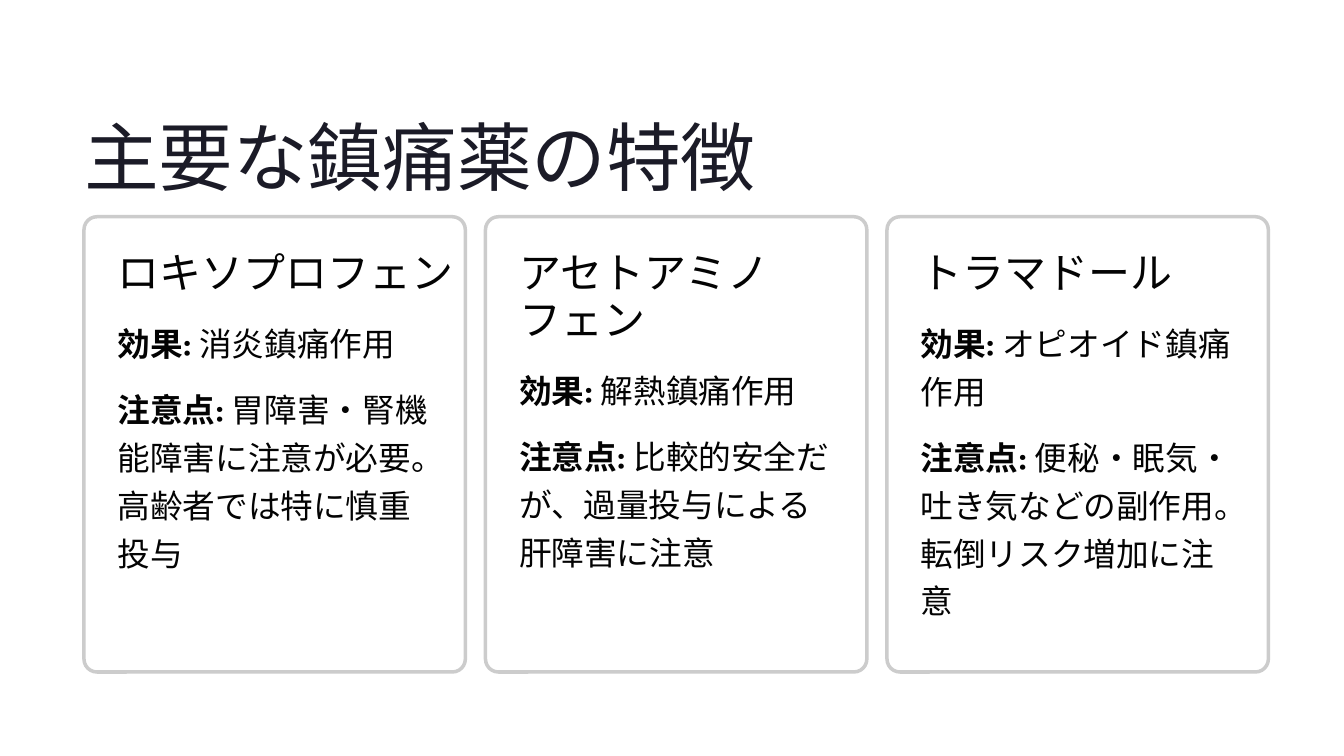
from lxml import etree
from pptx import Presentation
from pptx.dml.color import RGBColor
from pptx.enum.shapes import MSO_SHAPE
from pptx.enum.text import MSO_ANCHOR, PP_ALIGN
from pptx.oxml.ns import qn
from pptx.util import Inches, Pt

ROUND = MSO_SHAPE.ROUNDED_RECTANGLE
TOP = MSO_ANCHOR.TOP
LEFT = PP_ALIGN.LEFT

COLORS = {"title": "1B1B27", "text": "030303", "card": "FFFFFF", "edge": "CCCCCC"}

CARDS = [
    ("ロキソプロフェン", 1, "消炎鎮痛作用", 1,
     "胃障害・腎機能障害に注意が必要。高齢者では特に慎重投与", 4),
    ("アセトアミノフェン", 2, "解熱鎮痛作用", 1,
     "比較的安全だが、過量投与による肝障害に注意", 3),
    ("トラマドール", 1, "オピオイド鎮痛作用", 2,
     "便秘・眠気・吐き気などの副作用。転倒リスク増加に注意", 3),
]


def color(key):
    return RGBColor.from_string(COLORS[key])


def add_text(slide, box, runs, font, size, lead, tint="text"):
    frame = slide.shapes.add_textbox(*map(Inches, box)).text_frame
    frame.margin_left = frame.margin_right = 0
    frame.margin_top = frame.margin_bottom = 0
    frame.word_wrap = True
    frame.vertical_anchor = TOP
    para = frame.paragraphs[0]
    para.alignment = LEFT
    para.line_spacing = Pt(lead)
    for words, bold in runs:
        run = para.add_run()
        run.text = words
        run.font.name = font
        run.font.size = Pt(size)
        run.font.bold = bold
        run.font.color.rgb = color(tint)


def add_title(slide, box):
    add_text(slide, box, [("主要な鎮痛薬の特徴", False)], "Inter", 64, 80, "title")


def add_panel(slide, box):
    panel = slide.shapes.add_shape(ROUND, *map(Inches, box))
    panel.adjustments[0] = 0.034
    panel.shadow.inherit = False
    panel.fill.solid()
    panel.fill.fore_color.rgb = color("card")
    fill = panel.fill.fore_color._xFill.find(qn("a:srgbClr"))
    etree.SubElement(fill, qn("a:alpha")).set("val", "95000")
    panel.line.color.rgb = color("edge")
    panel.line.width = Pt(3)


def add_card(slide, box, card):
    name, rows, effect, span, note, depth = card
    left, top, width, height = box
    add_panel(slide, box)
    left, top, width = left + 0.4, top + 0.4, width - 0.81
    room = width + 0.37 if rows == 1 else width
    add_text(slide, (left, top, room, 0.65 * rows), [(name, False)], "Inter", 36, 40)
    top += 0.56 * rows + 0.21
    add_text(slide, (left, top, width, 0.67 * span),
             [("効果:", True), (" " + effect, False)], "Karla", 28, 41)
    top += 0.57 * span + 0.22
    add_text(slide, (left, top, width, 0.67 * depth),
             [("注意点:", True), (" " + note, False)], "Karla", 28, 41)


def main():
    deck = Presentation()
    deck.slide_width, deck.slide_height = Inches(16), Inches(9)
    slide = deck.slides.add_slide(deck.slide_layouts[6])
    add_title(slide, (1, 1.27, 8.91, 1.11))
    for i, card in enumerate(CARDS):
        add_card(slide, (1 + 4.78 * i, 2.58, 4.54, 5.42), card)
    deck.save("out.pptx")


if __name__ == "__main__":
    main()
